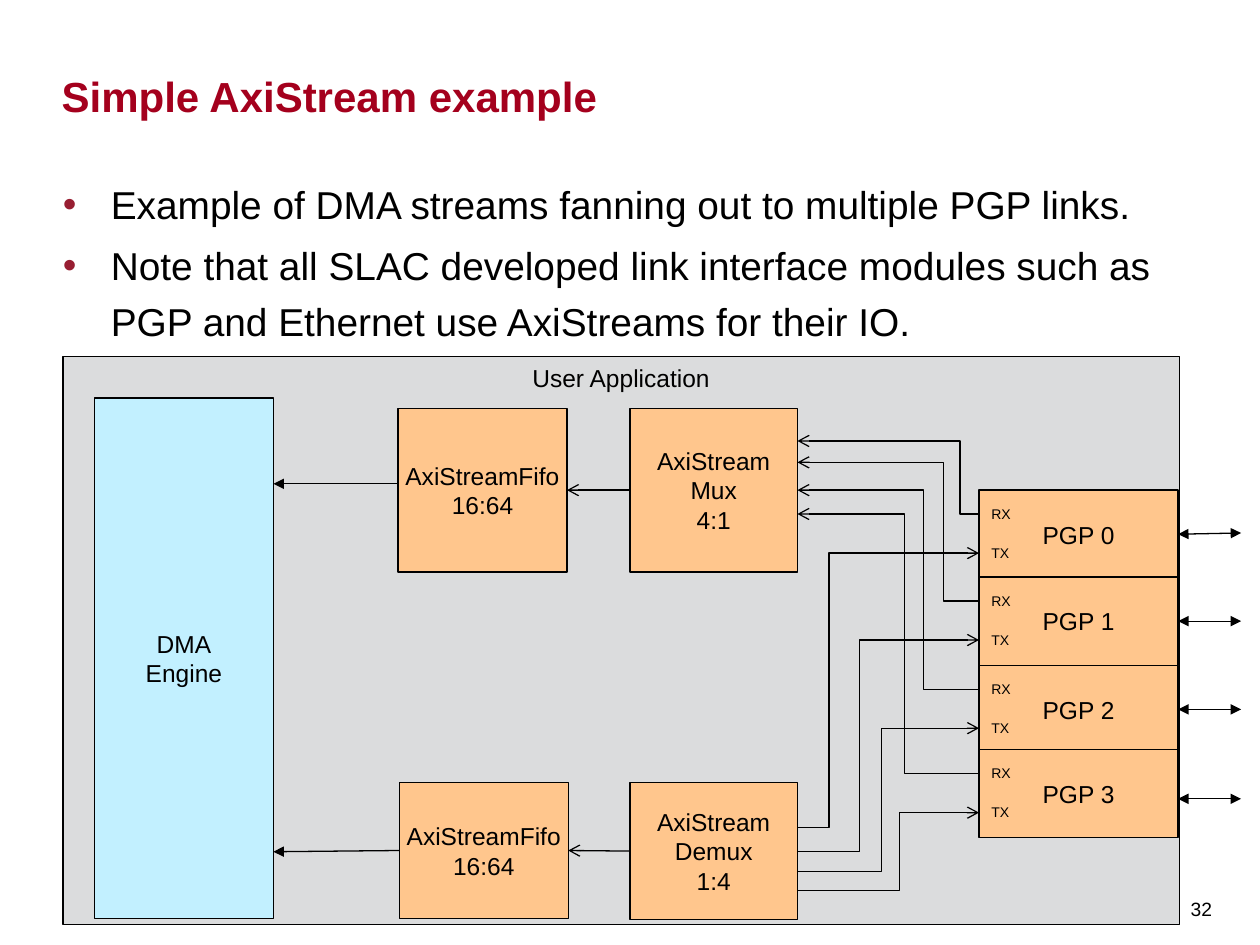
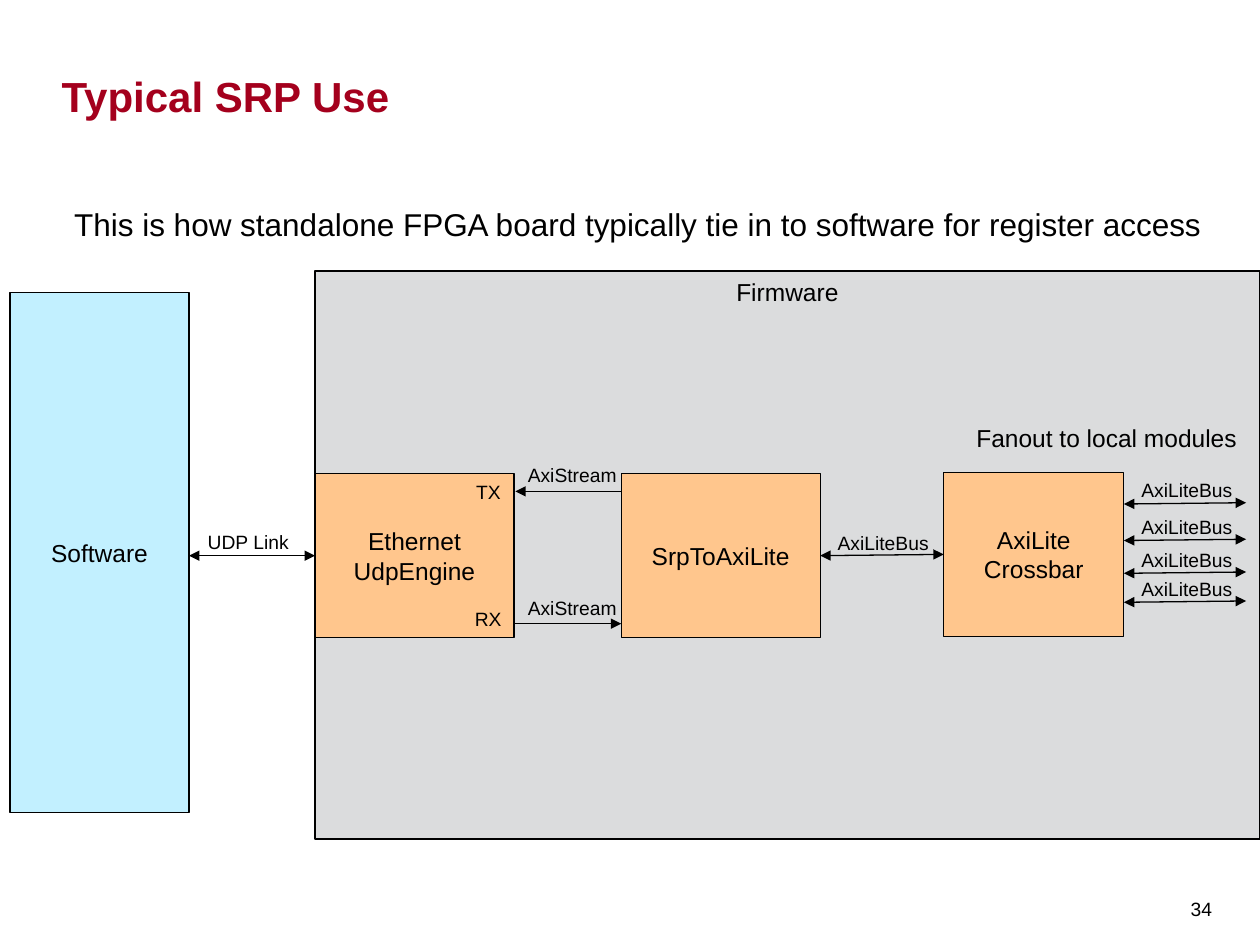
from lxml import etree
from pptx import Presentation
from pptx.dml.color import RGBColor
from pptx.enum.shapes import MSO_CONNECTOR, MSO_SHAPE
from pptx.enum.text import MSO_ANCHOR, MSO_AUTO_SIZE, PP_ALIGN
from pptx.oxml.ns import qn
from pptx.util import Inches, Pt

RECTANGLE = MSO_SHAPE.RECTANGLE
STRAIGHT, ELBOW = MSO_CONNECTOR.STRAIGHT, MSO_CONNECTOR.ELBOW
TOP, MIDDLE, BOTTOM = MSO_ANCHOR.TOP, MSO_ANCHOR.MIDDLE, MSO_ANCHOR.BOTTOM
LEFT_SIDE, RIGHT_SIDE = 1, 3

FONT = "Arial"
COLORS = {"title": "A4001D", "bullet": "981E32", "text": "000000", "line": "000000",
          "frame": "DBDCDD", "host": "C2F0FF", "module": "FFC68D"}

# Stream slide: boxes are (lines, fill, left, top, width, height)
STREAM_TITLE = "Simple AxiStream example"
STREAM_BULLETS = [
    "Example of DMA streams fanning out to multiple PGP links.",
    "Note that all SLAC developed link interface modules such as "
    "PGP and Ethernet use AxiStreams for their IO.",
]
STREAM_BOXES = {
    "application": (["User Application"], "frame", 0.5, 2.83, 8.86, 4.51),
    "dma": (["DMA", "Engine"], "host", 0.75, 3.16, 1.42, 4.13),
    "mux": (["AxiStream", "Mux", "4:1"], "module", 5, 3.24, 1.33, 1.3),
    "demux": (["AxiStream", "Demux", "1:4"], "module", 5, 6.21, 1.33, 1.09),
    "rx_fifo": (["AxiStreamFifo", "16:64"], "module", 3.16, 3.24, 1.34, 1.3),
    "tx_fifo": (["AxiStreamFifo", "16:64"], "module", 3.17, 6.21, 1.34, 1.08),
}
PGP_LEFT, PGP_WIDTH, PGP_HEIGHT = 7.77, 1.58, 0.7
RX_OFFSET, TX_OFFSET = 0.19, 0.5
MUX_RIGHT = 6.33
# top, link y, mux port y, receive lane x, demux port y, transmit lane x
PGP_LANES = [
    (3.89, 4.23, 3.5, 7.62, 6.57, 6.58),
    (4.58, 4.93, 3.67, 7.49, 6.76, 6.82),
    (5.28, 5.63, 3.89, 7.33, 6.92, 7.0),
    (5.95, 6.34, 4.08, 7.18, 7.07, 7.14),
]

# Register slide
REGISTER_TITLE = "Typical SRP Use"
REGISTER_BOXES = {
    "software": (["Software"], "host", 0.08, 2.32, 1.42, 4.13),
    "firmware": (["Firmware"], "frame", 2.5, 2.15, 7.5, 4.51),
    "ethernet": (["Ethernet", "UdpEngine"], "module", 2.5, 3.76, 1.58, 1.3),
    "srp": (["SrpToAxiLite"], "module", 4.93, 3.76, 1.58, 1.3),
    "crossbar": (["AxiLite", "Crossbar"], "module", 7.49, 3.75, 1.43, 1.3),
}
# text, left, top, width, height, size
REGISTER_LABELS = [
    ("UDP Link", 1.55, 4.16, 0.86, 0.29, 11),
    ("TX", 3.68, 3.76, 0.4, 0.29, 11),
    ("RX", 3.67, 4.77, 0.42, 0.29, 11),
    ("AxiStream", 4.09, 3.63, 0.91, 0.29, 11),
    ("AxiStream", 4.09, 4.68, 0.91, 0.29, 11),
    ("AxiLiteBus", 6.55, 4.17, 0.93, 0.29, 11),
    ("Fanout to local modules", 7.65, 3.31, 2.28, 0.34, 14),
    ("This is how standalone FPGA board typically tie in to software for register access",
     0.49, 1.58, 9.23, 0.4, 18),
]
FANOUT_TOPS = [3.75, 4.04, 4.3, 4.53]


def color(name):
    return RGBColor.from_string(COLORS[name])


def set_font(paragraph, size, name="text", bold=False):
    font = paragraph.font
    font.name, font.size, font.bold = FONT, Pt(size), bold
    font.color.rgb = color(name)


def fill_frame(shape, lines, size, anchor=TOP, margins=None, wrap=False, align=None,
               name="text", bold=False):
    frame = shape.text_frame
    frame.word_wrap = wrap
    frame.vertical_anchor = anchor
    if margins:
        (frame.margin_left, frame.margin_top,
         frame.margin_right, frame.margin_bottom) = map(Inches, margins)
    for index, line in enumerate(lines):
        paragraph = frame.add_paragraph() if index else frame.paragraphs[0]
        paragraph.text = line
        if align is not None:
            paragraph.alignment = align
        set_font(paragraph, size, name, bold)
    return frame


def add_text(slide, lines, left, top, width, height, size, **options):
    shape = slide.shapes.add_textbox(*map(Inches, (left, top, width, height)))
    return fill_frame(shape, lines, size, **options)


def add_label(slide, text, left, top, width, height, size):
    frame = add_text(slide, [text], left, top, width, height, size)
    frame.auto_size = MSO_AUTO_SIZE.SHAPE_TO_FIT_TEXT


def add_box(slide, lines, fill, left, top, width, height):
    shape = slide.shapes.add_shape(RECTANGLE, *map(Inches, (left, top, width, height)))
    shape.shadow.inherit = False
    shape.fill.solid()
    shape.fill.fore_color.rgb = color(fill)
    shape.line.color.rgb = color("line")
    shape.line.width = Pt(0.75)
    fill_frame(shape, lines, 14, anchor=TOP if fill == "frame" else MIDDLE,
               align=PP_ALIGN.CENTER)
    return shape


def add_line(slide, start, end, head=None, tail=None, begin=None, finish=None, lane=None):
    """Draw a line; begin and finish are (box, side), lane is the x of an elbow."""
    kind = STRAIGHT if lane is None else ELBOW
    connector = slide.shapes.add_connector(kind, *map(Inches, (*start, *end)))
    if begin:
        connector.begin_connect(*begin)
    if finish:
        connector.end_connect(*finish)
    connector.line.color.rgb = color("line")
    connector.line.width = Pt(0.75)
    properties = connector._element.spPr
    outline = properties.find(qn("a:ln"))
    for tag, arrow in (("a:headEnd", head), ("a:tailEnd", tail)):
        if arrow:
            etree.SubElement(outline, qn(tag), type=arrow)
    etree.SubElement(properties, qn("a:effectLst"))
    if lane is not None:
        share = round((lane - start[0]) / (end[0] - start[0]) * 100000)
        geometry = properties.find(qn("a:prstGeom"))
        adjustments = geometry.find(qn("a:avLst"))
        if adjustments is None:
            adjustments = etree.SubElement(geometry, qn("a:avLst"))
        etree.SubElement(adjustments, qn("a:gd"), name="adj1", fmla=f"val {share}")


def add_slide(presentation, title, number):
    slide = presentation.slides.add_slide(presentation.slide_layouts[6])
    add_text(slide, [title], 0.49, 0.14, 8.86, 0.82, 24, anchor=BOTTOM,
             margins=(0, 0, 0, 0), wrap=True, name="title", bold=True)
    add_text(slide, [str(number)], 9.37, 6.91, 0.35, 0.59, 11, anchor=MIDDLE,
             margins=(0.08, 0.06, 0.08, 0.05), wrap=True)
    return slide


def add_bullets(slide, lines):
    frame = add_text(slide, [], 0.5, 1.36, 8.87, 1.47, 22.2,
                     margins=(0, 0, 0, 0), wrap=True)
    for index, line in enumerate(lines):
        paragraph = frame.add_paragraph() if index else frame.paragraphs[0]
        paragraph.text = line
        paragraph.line_spacing = 1.2
        paragraph.space_after = Pt(3)
        properties = paragraph._p.get_or_add_pPr()
        properties.set("marL", str(Inches(0.38)))
        properties.set("indent", str(-Inches(0.38)))
        bullet_color = etree.SubElement(properties, qn("a:buClr"))
        etree.SubElement(bullet_color, qn("a:srgbClr"), val=COLORS["bullet"])
        etree.SubElement(properties, qn("a:buFont"), typeface=FONT)
        etree.SubElement(properties, qn("a:buChar"), char="•")
        set_font(paragraph, 22.2)


def build_stream_slide(presentation):
    slide = add_slide(presentation, STREAM_TITLE, 32)
    add_bullets(slide, STREAM_BULLETS)
    boxes = {key: add_box(slide, *box) for key, box in STREAM_BOXES.items()}

    # Fifo paths to the DMA engine
    add_line(slide, (2.17, 3.84), (3.16, 3.84), head="triangle")
    add_line(slide, (2.17, 6.76), (3.17, 6.76), head="triangle",
             finish=(boxes["tx_fifo"], LEFT_SIDE))
    add_line(slide, (5, 3.89), (4.5, 3.89), tail="arrow",
             begin=(boxes["mux"], LEFT_SIDE), finish=(boxes["rx_fifo"], RIGHT_SIDE))
    add_line(slide, (5, 6.76), (4.51, 6.76), tail="arrow",
             begin=(boxes["demux"], LEFT_SIDE), finish=(boxes["tx_fifo"], RIGHT_SIDE))

    # PGP modules with their receive, transmit and external links
    link_x = PGP_LEFT + PGP_WIDTH
    for index, (top, link_y, mux_y, rx_lane, demux_y, tx_lane) in enumerate(PGP_LANES):
        module = add_box(slide, [f"PGP {index}"], "module",
                         PGP_LEFT, top, PGP_WIDTH, PGP_HEIGHT)
        for text, offset in (("RX", RX_OFFSET), ("TX", TX_OFFSET)):
            add_label(slide, text, PGP_LEFT, top + offset - 0.12, 0.36, 0.24, 8)
        add_line(slide, (PGP_LEFT, top + RX_OFFSET), (MUX_RIGHT, mux_y),
                 tail="arrow", lane=rx_lane)
        add_line(slide, (MUX_RIGHT, demux_y), (PGP_LEFT, top + TX_OFFSET),
                 tail="arrow", lane=tx_lane)
        centred = abs(link_y - top - PGP_HEIGHT / 2) < 0.02
        add_line(slide, (link_x + 0.5, link_y), (link_x, link_y), "triangle", "triangle",
                 finish=(module, RIGHT_SIDE) if centred else None)


def build_register_slide(presentation):
    slide = add_slide(presentation, REGISTER_TITLE, 34)
    boxes = {key: add_box(slide, *box) for key, box in REGISTER_BOXES.items()}
    for label in REGISTER_LABELS:
        add_label(slide, *label)

    # Links between the modules
    add_line(slide, (1.5, 4.41), (2.5, 4.41), "triangle", "triangle",
             finish=(boxes["ethernet"], LEFT_SIDE))
    add_line(slide, (4.09, 3.9), (4.93, 3.9), head="triangle")
    add_line(slide, (4.09, 4.95), (4.93, 4.95), tail="triangle")
    add_line(slide, (6.51, 4.42), (7.48, 4.41), "triangle", "triangle",
             begin=(boxes["srp"], RIGHT_SIDE), finish=(boxes["crossbar"], LEFT_SIDE))

    # Crossbar fanout
    for top in FANOUT_TOPS:
        add_label(slide, "AxiLiteBus", 8.96, top, 0.93, 0.29, 11)
        add_line(slide, (8.92, top + 0.25), (9.89, top + 0.24), "triangle", "triangle")


def main():
    presentation = Presentation()
    presentation.slide_width, presentation.slide_height = Inches(10), Inches(7.5)
    build_stream_slide(presentation)
    build_register_slide(presentation)
    presentation.save("out.pptx")


if __name__ == "__main__":
    main()
